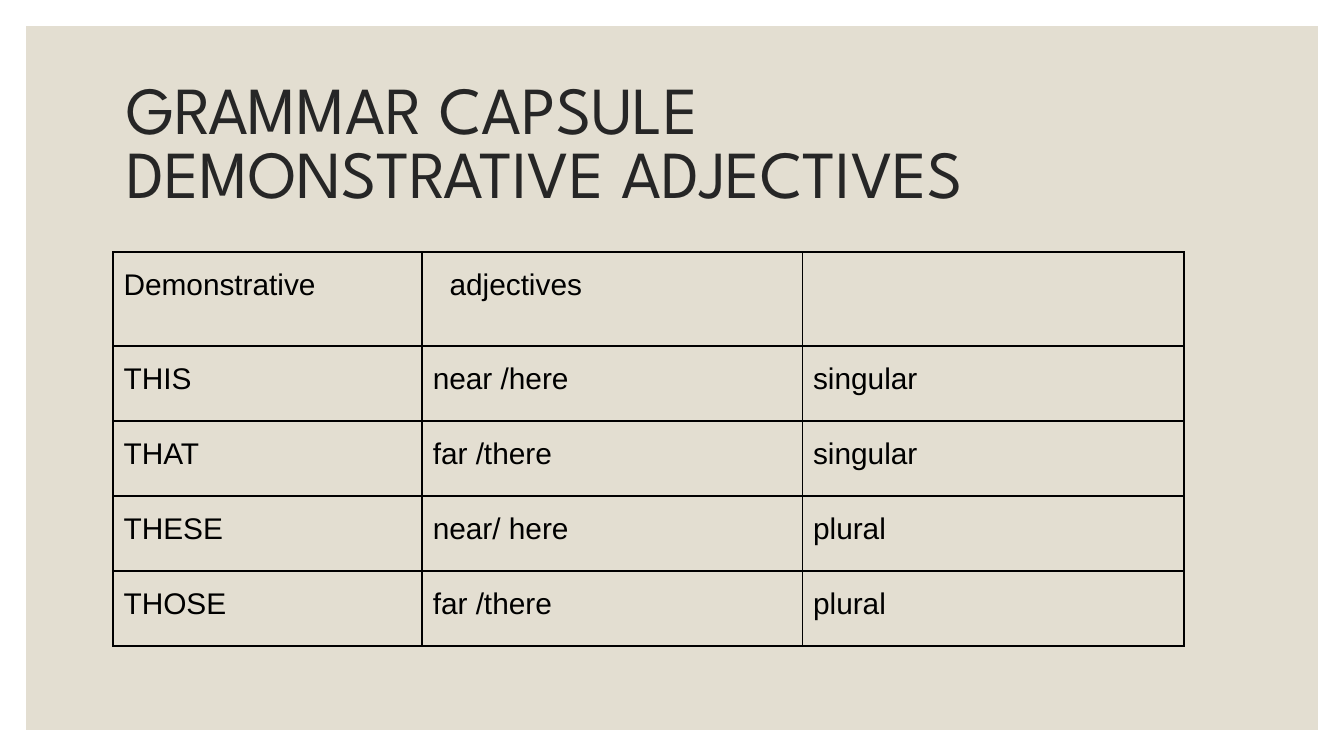
from lxml.etree import SubElement
from pptx import Presentation
from pptx.dml.color import RGBColor
from pptx.enum.shapes import MSO_SHAPE
from pptx.enum.text import MSO_ANCHOR, PP_ALIGN
from pptx.oxml.ns import qn
from pptx.util import Pt

COLORS = {"panel": "E3DED1", "title": "262626", "text": "000000", "border": "000000"}
COLUMNS = [165.6, 203.76, 204.48]
ROWS = [50.4] + [40.2] * 4
CELL_MARGIN = 5.76
HEADER_INDENT = 9
CONTENT = [
    ["Demonstrative", "adjectives", ""],
    ["THIS", "near /here", "singular"],
    ["THAT", "far /there", "singular"],
    ["THESE", "near/ here", "plural"],
    ["THOSE", "far /there", "plural"],
]


def write_text(tf, text, *, size, font, color, spacing):
    """Write one left-aligned paragraph into a text frame."""
    tf.word_wrap = True
    p = tf.paragraphs[0]
    p.alignment = PP_ALIGN.LEFT
    p.line_spacing = spacing
    r = p.add_run()
    r.text = text
    r.font.size = Pt(size)
    r.font.name = font
    r.font.color.rgb = RGBColor.from_string(COLORS[color])


def add_panel(s, x, y, w, h):
    """Place the tinted panel behind the content."""
    sp = s.shapes.add_shape(MSO_SHAPE.RECTANGLE, Pt(x), Pt(y), Pt(w), Pt(h))
    sp.shadow.inherit = False
    sp.fill.solid()
    sp.fill.fore_color.rgb = RGBColor.from_string(COLORS["panel"])
    sp.line.fill.background()


def add_title(s, x, y, w, h):
    """Place the slide title, centred vertically in its box."""
    tf = s.shapes.add_textbox(Pt(x), Pt(y), Pt(w), Pt(h)).text_frame
    tf.vertical_anchor = MSO_ANCHOR.MIDDLE
    write_text(tf, "GRAMMAR CAPSULE DEMONSTRATIVE ADJECTIVES",
               size=36, font="League Spartan", color="title", spacing=0.8)


def add_borders(cell):
    """Draw a thin line on all four sides of a cell."""
    tc_pr = cell._tc.get_or_add_tcPr()
    for side in ("a:lnL", "a:lnR", "a:lnT", "a:lnB"):
        ln = SubElement(tc_pr, qn(side), w=str(Pt(1)))
        fill = SubElement(ln, qn("a:solidFill"))
        SubElement(fill, qn("a:srgbClr"), val=COLORS["border"])


def add_grammar_table(s, x, y, w, h):
    """Place the bordered table of demonstrative adjectives."""
    table = s.shapes.add_table(len(ROWS), len(COLUMNS), Pt(x), Pt(y), Pt(w), Pt(h)).table
    table.first_row = table.horz_banding = False
    for column, width in zip(table.columns, COLUMNS):
        column.width = Pt(w * width / sum(COLUMNS))
    for row, height, texts in zip(table.rows, ROWS, CONTENT):
        row.height = Pt(h * height / sum(ROWS))
        for cell, text in zip(row.cells, texts):
            add_borders(cell)
            cell.fill.background()
            cell.margin_left = cell.margin_right = Pt(CELL_MARGIN)
            cell.margin_top = cell.margin_bottom = 0
            if text:
                write_text(cell.text_frame, text, size=16, font="Arial",
                           color="text", spacing=1.5)
    table.cell(0, 1).margin_left = Pt(CELL_MARGIN + HEADER_INDENT)


def main():
    """Build and save the slide."""
    prs = Presentation()
    prs.slide_width, prs.slide_height = Pt(720), Pt(405)
    s = prs.slides.add_slide(prs.slide_layouts[6])
    add_panel(s, 14, 14, 692, 377)
    add_title(s, 60.5, 34.5, 574, 88.5)
    add_grammar_table(s, 60.5, 135, sum(COLUMNS), sum(ROWS))
    prs.save("out.pptx")


if __name__ == "__main__":
    main()
